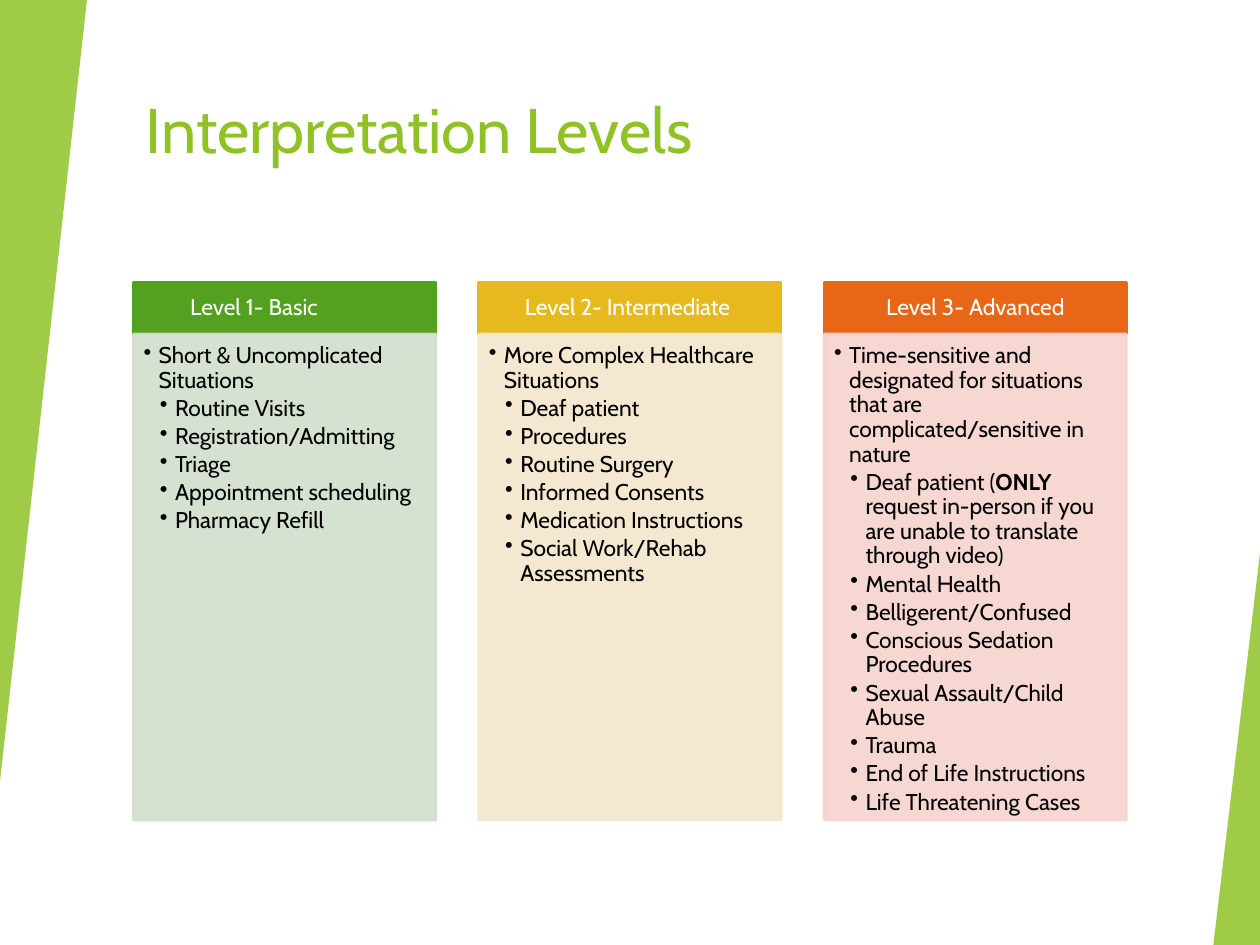
from pptx import Presentation
from pptx.dml.color import RGBColor
from pptx.enum.shapes import MSO_SHAPE
from pptx.enum.text import MSO_ANCHOR, PP_ALIGN
from pptx.oxml.ns import qn
from pptx.util import Inches, Pt
from lxml import etree

RECTANGLE = MSO_SHAPE.RECTANGLE
TRIANGLE = MSO_SHAPE.ISOSCELES_TRIANGLE
TOP, MIDDLE = MSO_ANCHOR.TOP, MSO_ANCHOR.MIDDLE
LEFT, CENTER = PP_ALIGN.LEFT, PP_ALIGN.CENTER

WHITE = RGBColor(0xFF, 0xFF, 0xFF)
BLACK = RGBColor(0x00, 0x00, 0x00)
LIME = RGBColor(0x90, 0xC2, 0x26)
GREEN = RGBColor(0x54, 0xA0, 0x21)
PALE_GREEN = RGBColor(0xD1, 0xDF, 0xCD)
GOLD = RGBColor(0xE6, 0xB9, 0x1E)
PALE_GOLD = RGBColor(0xF5, 0xE6, 0xCD)
ORANGE = RGBColor(0xE7, 0x66, 0x18)
PALE_ORANGE = RGBColor(0xF6, 0xD3, 0xCC)

TITLE_FONT = {"name": "Cabin", "size": Pt(36)}
COLUMN_FONT = {"name": "Cabin", "size": Pt(13)}
HEADER_FRAME = {"word_wrap": True, "vertical_anchor": MIDDLE,
                "margin_left": Inches(0.1), "margin_right": Inches(0.1),
                "margin_top": Inches(0.06), "margin_bottom": Inches(0.06)}
BODY_FRAME = {"word_wrap": True, "vertical_anchor": TOP,
              "margin_left": Inches(0.08), "margin_right": Inches(0.1),
              "margin_top": Inches(0.08), "margin_bottom": Inches(0.11)}
HEADER_PARAGRAPH = {"alignment": CENTER, "line_spacing": 0.9}
BODY_PARAGRAPH = {"alignment": LEFT, "line_spacing": 0.9, "space_after": Pt(2)}
BULLET_INDENTS = (0.12, 0.25)
HANGING = 0.12

HEADER_HEIGHT = 0.41
COLUMN_WIDTH = 2.4
COLUMN_STEP = 2.74

LEVELS = [
    ("Level 1- Basic\t", GREEN, PALE_GREEN, "Short & Uncomplicated Situations",
     ["Routine Visits", "Registration/Admitting", "Triage",
      "Appointment scheduling", "Pharmacy Refill"]),
    ("Level 2- Intermediate ", GOLD, PALE_GOLD, "More Complex Healthcare Situations",
     ["Deaf patient", "Procedures", "Routine Surgery", "Informed Consents",
      "Medication Instructions", "Social Work/Rehab Assessments"]),
    ("Level 3- Advanced", ORANGE, PALE_ORANGE,
     "Time-sensitive and designated for situations that are "
     "complicated/sensitive in nature",
     ["Deaf patient (**ONLY** request in-person if you are unable to "
      "translate through video)",
      "Mental Health", "Belligerent/Confused", "Conscious Sedation Procedures",
      "Sexual Assault/Child Abuse", "Trauma", "End of Life Instructions",
      "Life Threatening Cases"]),
]


def apply(target, values):
    for name, value in values.items():
        setattr(target, name, value)


def set_opacity(shape, percent):
    for color in shape._element.spPr.iter(qn("a:srgbClr")):
        etree.SubElement(color, qn("a:alpha"), val=str(percent * 1000))


def add_filled_shape(slide, kind, box, color, outlined=False):
    shape = slide.shapes.add_shape(kind, *map(Inches, box))
    shape.shadow.inherit = False
    shape.fill.solid()
    shape.fill.fore_color.rgb = color
    if outlined:
        shape.line.color.rgb = color
        shape.line.width = Pt(1.5)
    else:
        shape.line.fill.background()
    return shape


def add_runs(paragraph, text, font, color):
    for index, part in enumerate(text.split("**")):
        run = paragraph.add_run()
        run.text = part
        apply(run.font, font)
        run.font.bold = index % 2 == 1
        run.font.color.rgb = color


def add_bullet(paragraph, level):
    paragraph.level = level
    properties = paragraph._p.get_or_add_pPr()
    properties.set("marL", str(Inches(BULLET_INDENTS[level])))
    properties.set("indent", str(-Inches(HANGING)))
    etree.SubElement(properties, qn("a:buChar"), char="•")


def add_edge_wedge(slide, box, rotation):
    wedge = add_filled_shape(slide, TRIANGLE, box, LIME)
    wedge.adjustments[0] = 1
    wedge.rotation = rotation
    set_opacity(wedge, 85)


def add_title(slide, box, text):
    frame = slide.shapes.add_textbox(*map(Inches, box)).text_frame
    frame.word_wrap = True
    add_runs(frame.paragraphs[0], text, TITLE_FONT, LIME)


def add_column_header(slide, box, text, color):
    header = add_filled_shape(slide, RECTANGLE, box, color, outlined=True)
    apply(header.text_frame, HEADER_FRAME)
    paragraph = header.text_frame.paragraphs[0]
    apply(paragraph, HEADER_PARAGRAPH)
    add_runs(paragraph, text, COLUMN_FONT, WHITE)


def add_column_body(slide, box, summary, situations, color):
    body = add_filled_shape(slide, RECTANGLE, box, color, outlined=True)
    set_opacity(body, 90)
    frame = body.text_frame
    apply(frame, BODY_FRAME)
    for index, text in enumerate([summary, *situations]):
        paragraph = frame.add_paragraph() if index else frame.paragraphs[0]
        add_bullet(paragraph, min(index, 1))
        apply(paragraph, BODY_PARAGRAPH)
        add_runs(paragraph, text, COLUMN_FONT, BLACK)


def add_level_columns(slide, left, top, height):
    for index, (name, color, tint, summary, situations) in enumerate(LEVELS):
        column_left = left + index * COLUMN_STEP
        add_column_header(slide, (column_left, top, COLUMN_WIDTH, HEADER_HEIGHT),
                          name, color)
        add_column_body(slide, (column_left, top + HEADER_HEIGHT, COLUMN_WIDTH,
                                height - HEADER_HEIGHT), summary, situations, tint)


def main():
    presentation = Presentation()
    presentation.slide_width = Inches(10)
    presentation.slide_height = Inches(7.5)
    slide = presentation.slides.add_slide(presentation.slide_layouts[6])
    add_title(slide, (1.06, 0.67, 8.36, 1.2), "Interpretation Levels")
    add_edge_wedge(slide, (0, 0, 0.69, 6.2), 180)
    add_edge_wedge(slide, (9.63, 4.39, 0.37, 3.11), 0)
    add_level_columns(slide, 1.06, 2.24, 4.27)
    presentation.save("out.pptx")


if __name__ == "__main__":
    main()
